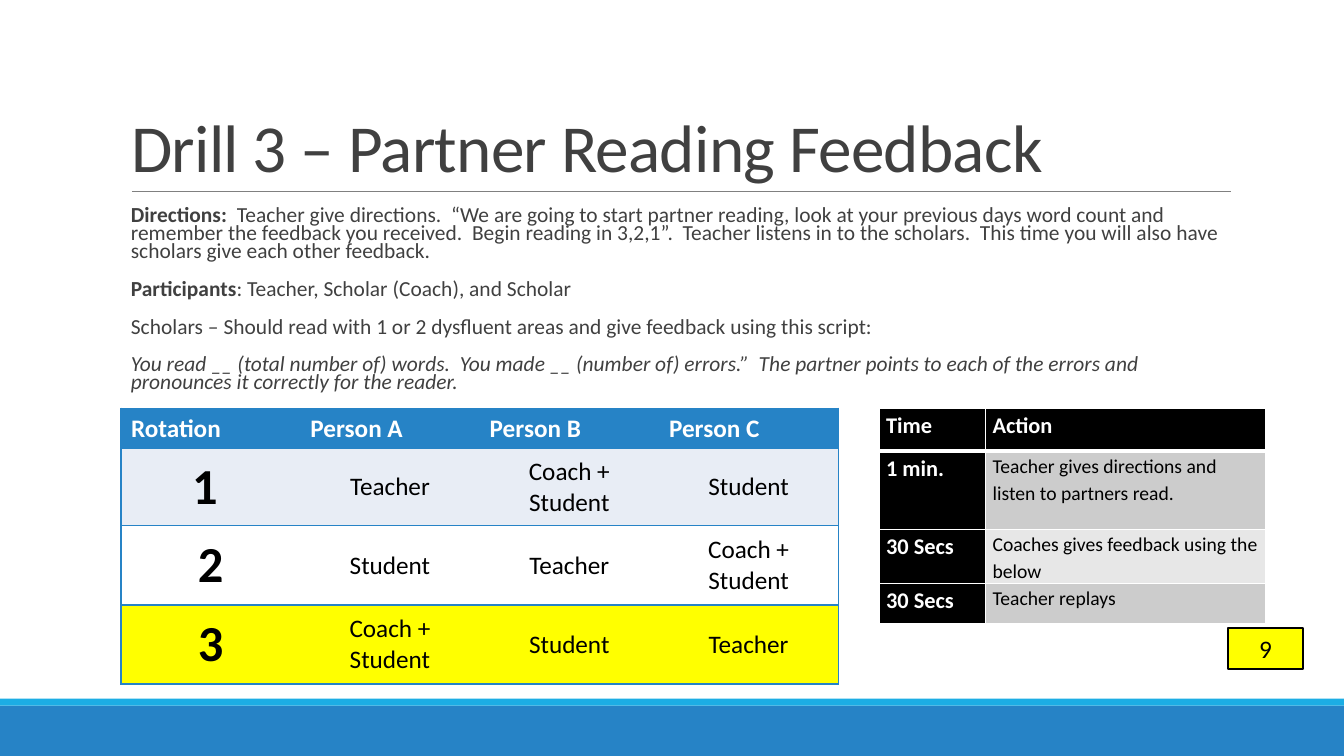
from dataclasses import dataclass
from lxml.etree import SubElement
from pptx import Presentation
from pptx.dml.color import RGBColor
from pptx.enum.shapes import MSO_CONNECTOR, MSO_SHAPE
from pptx.enum.text import MSO_ANCHOR, MSO_AUTO_SIZE, PP_ALIGN
from pptx.oxml.ns import qn
from pptx.util import Pt

# Content
TITLE = "Drill 3 – Partner Reading Feedback"
BODY = [
    [("Directions:  ", "b"),
     ("Teacher give directions.  “We are going to start partner reading, look at "
      "your previous days word count and remember the feedback you received.  "
      "Begin reading in 3,2,1”.  Teacher listens in to the scholars.  This time "
      "you will also have scholars give each other feedback.", "")],
    [("Participants", "b"), (": Teacher, Scholar (Coach), and Scholar", "")],
    [("Scholars – Should read with 1 or 2 dysfluent areas and give feedback "
      "using this script:", "")],
    [("You read __ (total number of) words.  You made __ (number of) errors.”  "
      "The partner points to each of the errors and pronounces it correctly "
      "for the reader.", "i")],
]
TURNS = [
    ("Rotation", "Person A", "Person B", "Person C"),
    ("1 ", "Teacher", "Coach + Student", "Student"),
    ("2", "Student", "Teacher", "Coach + Student"),
    ("3", "Coach + Student", "Student", "Teacher"),
]
STEPS = [
    ("Time", "Action"),
    ("1 min.", "Teacher gives directions and listen to partners read."),
    ("30 Secs", "Coaches gives feedback using the below"),
    ("30 Secs", "Teacher replays"),
]
PAGE = "9"


@dataclass(frozen=True)
class Theme:
    font: str = "Calibri"
    blue: str = "2683C6"
    cyan: str = "1CADE4"
    gray: str = "404040"
    rule: str = "808080"
    black: str = "000000"
    white: str = "FFFFFF"
    yellow: str = "FFFF00"
    pale: str = "E8EDF5"
    dark: str = "CCCCCC"
    light: str = "E7E7E7"
    head: float = 48
    text: float = 15.3
    cell: float = 18
    big: float = 36
    label: float = 16
    small: float = 14


T = Theme()
WIDE, HIGH = 960, 540
LEFT, TOP = 86.4, 291.6


def rgb(code):
    return RGBColor.from_string(code)


def write(para, text, size=T.cell, color=T.black, bold=False, italic=False,
          align=PP_ALIGN.LEFT, line=None, space=None):
    para.alignment = align
    if line:
        para.line_spacing = line
    run = para.add_run()
    run.text = text
    font = run.font
    font.name, font.size = T.font, Pt(size)
    font.bold, font.italic = bold, italic
    font.color.rgb = rgb(color)
    if space:
        run._r.get_or_add_rPr().set("spc", str(space))


def box(slide, x, y, w, h, fill, edge=None):
    shape = slide.shapes.add_shape(MSO_SHAPE.RECTANGLE, Pt(x), Pt(y), Pt(w), Pt(h))
    shape.shadow.inherit = False
    shape.fill.solid()
    shape.fill.fore_color.rgb = rgb(fill)
    if edge:
        shape.line.color.rgb = rgb(edge)
        shape.line.width = Pt(1.25)
    else:
        shape.line.fill.background()
    return shape


def border(cell, sides):
    props = cell._tc.get_or_add_tcPr()
    for side in "LRTB":
        if side in sides:
            color, width = sides[side]
            line = SubElement(props, qn("a:ln" + side), w=str(Pt(width)))
            fill = SubElement(line, qn("a:solidFill"))
            SubElement(fill, qn("a:srgbClr"), val=color)


def grid(slide, data, x, y, cols, rows, style):
    frame = slide.shapes.add_table(len(rows), len(cols), Pt(x), Pt(y),
                                   Pt(sum(cols)), Pt(sum(rows)))
    table = frame.table
    # Plain table style without bands or borders
    table._tbl.tblPr.find(qn("a:tableStyleId")).text = \
        "{2D5ABB26-0587-4C30-8999-92F81FD0307C}"
    for col, width in zip(table.columns, cols):
        col.width = Pt(width)
    for row, height in zip(table.rows, rows):
        row.height = Pt(height)
    for r, line in enumerate(data):
        for c, text in enumerate(line):
            cell = table.cell(r, c)
            fill, sides, pads, anchor, look = style(r, c)
            border(cell, sides)
            cell.fill.solid()
            cell.fill.fore_color.rgb = rgb(fill)
            cell.margin_left = cell.margin_right = Pt(pads[0])
            cell.margin_top = cell.margin_bottom = Pt(pads[1])
            cell.vertical_anchor = anchor
            write(cell.text_frame.paragraphs[0], text, **look)


def turn(r, c):
    fill = (T.blue, T.pale, T.white, T.yellow)[r]
    edge = (T.blue, 1)
    sides = {"T": edge, "B": edge}
    if c == 0:
        sides["L"] = edge
    if c == len(TURNS[0]) - 1:
        sides["R"] = edge
    if r == 0:
        return fill, sides, (7.2, 3.6), MSO_ANCHOR.TOP, dict(color=T.white, bold=True)
    look = dict(size=T.cell if c else T.big, bold=c == 0, align=PP_ALIGN.CENTER)
    return fill, sides, (7.2, 3.6), MSO_ANCHOR.MIDDLE, look


def step(r, c):
    sides = {side: (T.white, 1) for side in "LRTB"}
    if r < 2:
        sides["B" if r == 0 else "T"] = (T.white, 3)
    if r == 0 or c == 0:
        fill = T.black
        look = dict(size=T.label, color=T.white, bold=True, line=1.15)
    else:
        fill = T.dark if r % 2 else T.light
        look = dict(size=T.small, line=1.15)
    return fill, sides, (5, 0), MSO_ANCHOR.TOP, look


def main():
    deck = Presentation()
    deck.slide_width, deck.slide_height = Pt(WIDE), Pt(HIGH)
    slide = deck.slides.add_slide(deck.slide_layouts[5])

    # Footer bands and title rule
    box(slide, 0, 504, WIDE, 36, T.blue)
    box(slide, 0, 499, WIDE, 5, T.cyan)
    rule = slide.shapes.add_connector(MSO_CONNECTOR.STRAIGHT, Pt(94.3), Pt(136.8),
                                      Pt(879), Pt(136.8))
    rule.line.color.rgb = rgb(T.rule)
    rule.line.width = Pt(0.5)
    SubElement(rule._element.spPr, qn("a:effectLst"))

    # Title
    title = slide.shapes.title
    title.left, title.top, title.width, title.height = map(Pt, (LEFT, 22.3, 792, 114.5))
    frame = title.text_frame
    frame.word_wrap, frame.auto_size = True, MSO_AUTO_SIZE.NONE
    frame.vertical_anchor = MSO_ANCHOR.BOTTOM
    write(frame.paragraphs[0], TITLE, size=T.head, color=T.gray, line=0.85, space=-50)

    # Directions
    body = slide.shapes.add_textbox(Pt(LEFT), Pt(145.4), Pt(792), Pt(143.3))
    frame = body.text_frame
    frame.word_wrap = True
    frame.margin_left, frame.margin_right = Pt(7.2), 0
    for n, parts in enumerate(BODY):
        para = frame.add_paragraph() if n else frame.paragraphs[0]
        para.space_before, para.space_after = Pt(12 if n else 0), Pt(2)
        for text, mark in parts:
            write(para, text, size=T.text, color=T.gray, bold=mark == "b",
                  italic=mark == "i", line=0.7)

    # Page number
    page = box(slide, 877.4, 448.6, 53.3, 29.1, T.yellow, T.black)
    page.text_frame.vertical_anchor = MSO_ANCHOR.MIDDLE
    write(page.text_frame.paragraphs[0], PAGE, align=PP_ALIGN.CENTER)

    # Rotation and timing tables
    grid(slide, TURNS, LEFT, TOP, [128.1] * 4, [29, 55, 56.5, 56.5], turn)
    grid(slide, STEPS, 628, TOP, [76, 200], [30.4, 56, 38.6, 28.6], step)

    deck.save("out.pptx")


if __name__ == "__main__":
    main()
